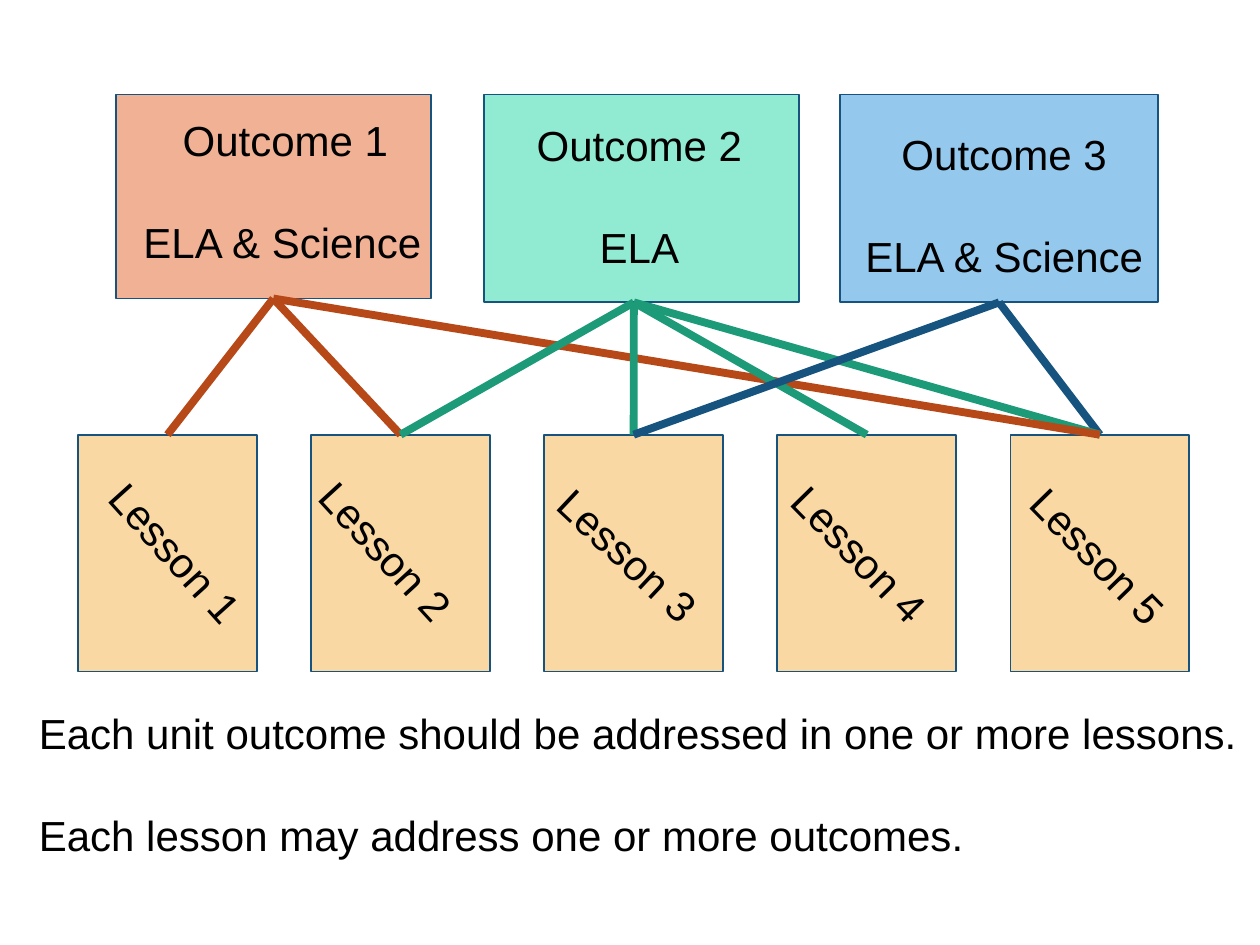
from pptx import Presentation
from pptx.dml.color import RGBColor
from pptx.enum.shapes import MSO_CONNECTOR, MSO_SHAPE
from pptx.enum.text import PP_ALIGN
from pptx.oxml.ns import qn
from pptx.util import Pt
from lxml import etree

RECTANGLE = MSO_SHAPE.RECTANGLE
STRAIGHT = MSO_CONNECTOR.STRAIGHT
LEFT, CENTER = PP_ALIGN.LEFT, PP_ALIGN.CENTER
TOP_SIDE, BOTTOM_SIDE = 0, 2
OUTLINE = "16537F"

deck = Presentation()
deck.slide_width, deck.slide_height = Pt(720), Pt(540)
slide = deck.slides.add_slide(deck.slide_layouts[6])


def add_box(left, top, width, height, fill):
    box = slide.shapes.add_shape(RECTANGLE, Pt(left), Pt(top), Pt(width), Pt(height))
    box.shadow.inherit = False
    box.fill.solid()
    box.fill.fore_color.rgb = RGBColor.from_string(fill)
    box.line.color.rgb = RGBColor.from_string(OUTLINE)
    box.line.width = Pt(1)
    return box


def add_text(left, top, width, height, lines, rotation=0):
    """Add a text box; lines holds one (text, alignment) pair per paragraph."""
    text_box = slide.shapes.add_textbox(Pt(left), Pt(top), Pt(width), Pt(height))
    text_box.rotation = rotation
    frame = text_box.text_frame
    frame.word_wrap = True
    for index, (text, alignment) in enumerate(lines):
        para = frame.add_paragraph() if index else frame.paragraphs[0]
        para.alignment = alignment
        if index:
            para.space_before = Pt(29.5)
        span = para.add_run()
        span.text = text
        span.font.name = "Arial"
        span.font.size = Pt(24)
        span.font.color.rgb = RGBColor.from_string("000000")


# Outcomes: box left, width, height, fill; text left, top, width; subject, alignment
outcomes = [
    (66.2, 180, 116.6, "F0B195", 74.9, 61.9, 176.4, "ELA & Science", LEFT),
    (276.5, 180, 118.8, "91EAD2", 297.4, 64.8, 136, "ELA", CENTER),
    (480.2, 181.5, 118.8, "94C8ED", 486, 69.8, 175.7, "ELA & Science", CENTER),
]
outcome_boxes = []
for number, outcome in enumerate(outcomes, 1):
    left, width, height, fill, text_left, text_top, text_width, subject, alignment = outcome
    outcome_boxes.append(add_box(left, 54, width, height, fill))
    add_text(text_left, text_top, text_width, 94.3,
             [(f"Outcome {number}", CENTER), (subject, alignment)])

# Lessons: evenly spaced boxes, each with a tilted label (left, top, rotation)
lesson_boxes = [add_box(44.6 + 133.2 * column, 248.4, 102.2, 135.4, "F9D8A3")
                for column in range(5)]
labels = [(44.6, 298.1, 48), (164.9, 297.4, 47.6), (303.1, 299.5, 43.3),
          (435.6, 298.8, 45.6), (571.7, 300.2, 45.8)]
for number, (left, top, rotation) in enumerate(labels, 1):
    add_text(left, top, 113, 36, [(f"Lesson {number}", LEFT)], rotation)

# Links from lesson to outcome, back to front
link_colors = {1: "B74919", 2: "1D9A78", 3: "16537F"}
links = [(1, 1), (2, 1), (5, 3), (5, 2), (5, 1), (4, 2), (3, 2), (3, 3), (2, 2)]
for lesson, outcome in links:
    # The lines of outcome 2 meet straight above lesson 3, left of the box's middle
    link = slide.shapes.add_connector(STRAIGHT, Pt(0), Pt(0), Pt(362.2), Pt(172.8))
    link.begin_connect(lesson_boxes[lesson - 1], TOP_SIDE)
    if outcome != 2:
        link.end_connect(outcome_boxes[outcome - 1], BOTTOM_SIDE)
    link.line.color.rgb = RGBColor.from_string(link_colors[outcome])
    link.line.width = Pt(4.5)
    etree.SubElement(link._element.spPr, qn("a:effectLst"))

add_text(15.1, 401, 706.3, 94.3, [
    ("Each unit outcome should be addressed in one or more lessons.", LEFT),
    ("Each lesson may address one or more outcomes.", LEFT),
])

deck.save("out.pptx")
